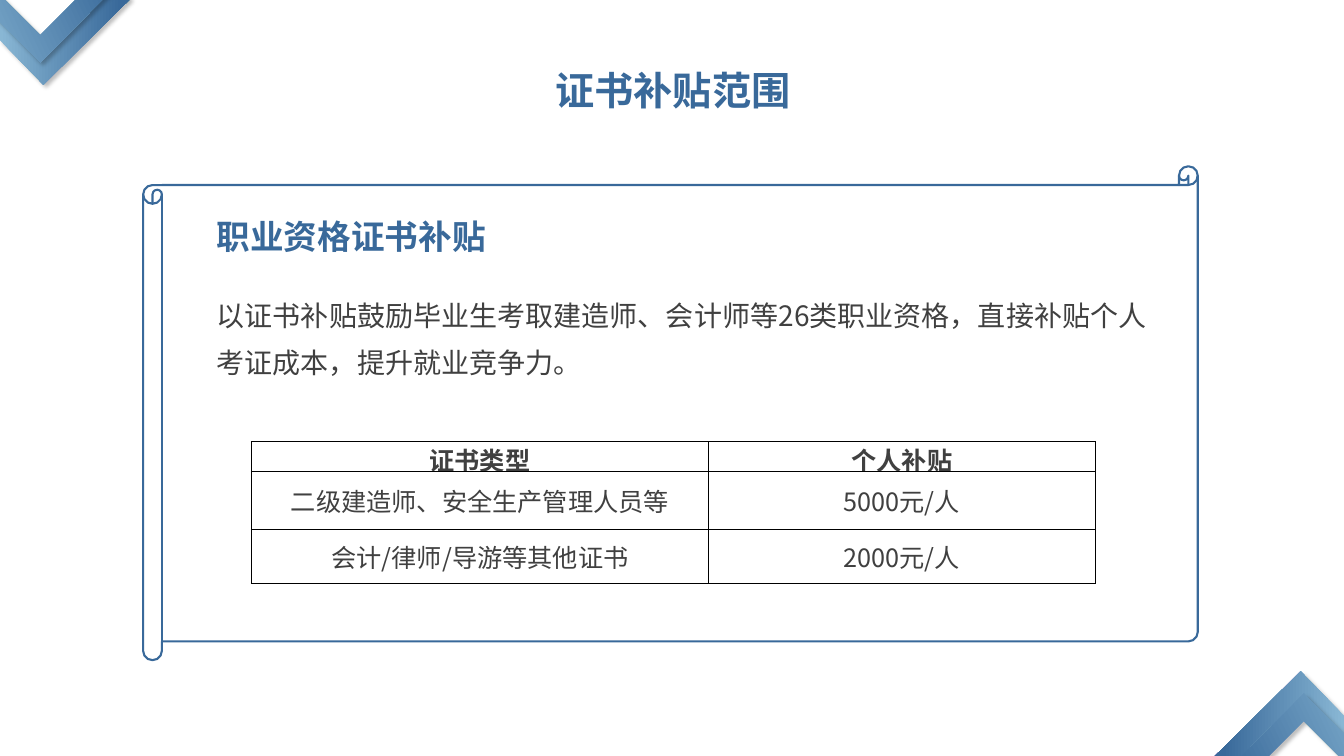
from dataclasses import dataclass

from lxml.etree import SubElement
from pptx import Presentation
from pptx.dml.color import RGBColor
from pptx.enum.lang import MSO_LANGUAGE_ID as Language
from pptx.enum.shapes import MSO_SHAPE as Shape
from pptx.enum.text import MSO_ANCHOR as Anchor, MSO_AUTO_SIZE as AutoSize, PP_ALIGN as Align
from pptx.oxml.ns import qn
from pptx.util import Inches, Pt


@dataclass(frozen=True)
class Theme:
    """Colours, font and type sizes of the slide."""
    font: str = "Noto Sans CJK SC"
    blue: RGBColor = RGBColor(0x39, 0x69, 0x9A)
    light_blue: RGBColor = RGBColor(0x89, 0xB7, 0xD4)
    text: RGBColor = RGBColor(0x40, 0x40, 0x40)
    white: RGBColor = RGBColor(0xFF, 0xFF, 0xFF)
    title_size: int = 28
    heading_size: int = 24
    body_size: int = 20
    table_size: int = 18


THEME = Theme()
SLIDE_WIDTH, SLIDE_HEIGHT = 13.33, 7.5
CHEVRONS = [
    ([(0.43, 0.84), (1.29, -0.01), (1.15, -0.15), (0.43, 0.57), (0, 0.14), (0, 0.4)], 0),
    ([(0.4, 0.62), (1.25, -0.24), (1.12, -0.37), (0.4, 0.35), (-0.32, -0.37), (-0.46, -0.24)], 25),
]
SUBSIDIES = [
    ("证书类型", "个人补贴"),
    ("二级建造师、安全生产管理人员等", "5000元/人"),
    ("会计/律师/导游等其他证书", "2000元/人"),
]


def write_text(frame, text, size, color, bold=False, align=Align.LEFT, spacing=None):
    """Write one formatted run into the first paragraph of a text frame."""
    paragraph = frame.paragraphs[0]
    paragraph.alignment = align
    if spacing:
        paragraph.line_spacing = spacing
    run = paragraph.add_run()
    run.text = text
    font = run.font
    font.name, font.size, font.bold = THEME.font, Pt(size), bold
    font.color.rgb = color
    font.language_id = Language.SIMPLIFIED_CHINESE
    SubElement(font._element, qn("a:ea"), typeface=THEME.font)


def add_shadow(shape):
    """Give a shape a soft shadow to the lower right."""
    shape.shadow.inherit = False
    effects = shape._element.spPr.find(qn("a:effectLst"))
    shadow = SubElement(effects, qn("a:outerShdw"), blurRad=str(Pt(3)), dist=str(Pt(3)),
                        dir="2700000", algn="tl", rotWithShape="0")
    color = SubElement(shadow, qn("a:srgbClr"), val="000000")
    SubElement(color, qn("a:alpha"), val="25000")


def add_corner(slide, opposite=False):
    """Draw the two chevrons of the top left corner, or turn them to the opposite one."""
    for points, angle in CHEVRONS:
        if opposite:
            points = [(SLIDE_WIDTH - x, SLIDE_HEIGHT - y) for x, y in points]
            angle += 180
        corners = [(Inches(x), Inches(y)) for x, y in points]
        builder = slide.shapes.build_freeform(*corners[0])
        builder.add_line_segments(corners[1:], close=True)
        chevron = builder.convert_to_shape()
        chevron.fill.gradient()
        chevron.fill.gradient_angle = angle
        stops = zip(chevron.fill.gradient_stops, (THEME.light_blue, THEME.blue), (0, 0.93))
        for stop, color, position in stops:
            stop.color.rgb = color
            stop.position = position
        chevron.line.fill.background()
        add_shadow(chevron)


def add_title(slide, left, top, width, height):
    """Place the slide title in its placeholder."""
    title = slide.shapes.title
    title.left, title.top = Inches(left), Inches(top)
    title.width, title.height = Inches(width), Inches(height)
    title.text_frame.vertical_anchor = Anchor.MIDDLE
    title.text_frame.auto_size = AutoSize.NONE
    write_text(title.text_frame, "证书补贴范围", THEME.title_size, THEME.blue, True, Align.CENTER)


def add_text_box(slide, left, top, width, height, anchor):
    """Add a wrapping text box without margins and return its text frame."""
    box = slide.shapes.add_textbox(Inches(left), Inches(top), Inches(width), Inches(height))
    frame = box.text_frame
    frame.word_wrap = True
    frame.vertical_anchor = anchor
    frame.margin_left = frame.margin_right = frame.margin_top = frame.margin_bottom = 0
    return frame


def add_borders(cell):
    """Draw a thin black line on each side of a cell."""
    properties = cell._tc.get_or_add_tcPr()
    for side in ("lnL", "lnR", "lnT", "lnB"):
        line = SubElement(properties, qn(f"a:{side}"), w=str(Pt(0.5)))
        fill = SubElement(line, qn("a:solidFill"))
        SubElement(fill, qn("a:srgbClr"), val="000000")


def add_subsidy_table(slide, left, top, widths, heights):
    """Add the table of certificate types and subsidies."""
    frame = slide.shapes.add_table(len(heights), len(widths), Inches(left), Inches(top),
                                   Inches(sum(widths)), Inches(sum(heights)))
    table = frame.table
    table.horz_banding = False
    table.first_row = False
    for column, width in zip(table.columns, widths):
        column.width = Inches(width)
    for index, (row, height, texts) in enumerate(zip(table.rows, heights, SUBSIDIES)):
        row.height = Inches(height)
        for cell, text in zip(row.cells, texts):
            add_borders(cell)
            cell.fill.solid()
            cell.fill.fore_color.rgb = THEME.white
            cell.vertical_anchor = Anchor.MIDDLE
            cell.margin_left = cell.margin_right = Inches(0.07)
            cell.margin_top = cell.margin_bottom = 0
            write_text(cell.text_frame, text, THEME.table_size, THEME.text,
                       index == 0, Align.CENTER)


def add_scroll(slide, left, top, width, height):
    """Draw the scroll with its heading, paragraph and table."""
    scroll = slide.shapes.add_shape(Shape.HORIZONTAL_SCROLL, Inches(left), Inches(top),
                                    Inches(width), Inches(height))
    scroll.adjustments[0] = 0.038
    scroll.shadow.inherit = False
    scroll.fill.background()
    scroll.line.color.rgb = THEME.blue
    scroll.line.width = Pt(1.5)

    text_left, text_width = left + 0.73, width - 1.24
    heading = add_text_box(slide, text_left, top + 0.54, text_width, 0.3, Anchor.MIDDLE)
    write_text(heading, "职业资格证书补贴", THEME.heading_size, THEME.blue, True)
    body = add_text_box(slide, text_left, top + 1.18, text_width, 1.01, Anchor.TOP)
    write_text(body, "以证书补贴鼓励毕业生考取建造师、会计师等26类职业资格，直接补贴个人考证成本，提升就业竞争力。",
               THEME.body_size, THEME.text, align=Align.JUSTIFY, spacing=1.4)
    add_subsidy_table(slide, left + 1.07, top + 2.73, (4.54, 3.83), (0.3, 0.57, 0.54))


def main():
    """Build and save the presentation."""
    presentation = Presentation()
    presentation.slide_width = Inches(SLIDE_WIDTH)
    presentation.slide_height = Inches(SLIDE_HEIGHT)
    slide = presentation.slides.add_slide(presentation.slide_layouts[5])
    add_corner(slide)
    add_corner(slide, opposite=True)
    add_title(slide, 0.71, 0.52, 11.93, 0.75)
    add_scroll(slide, 1.42, 1.65, 10.46, 4.9)
    presentation.save("out.pptx")


if __name__ == "__main__":
    main()
